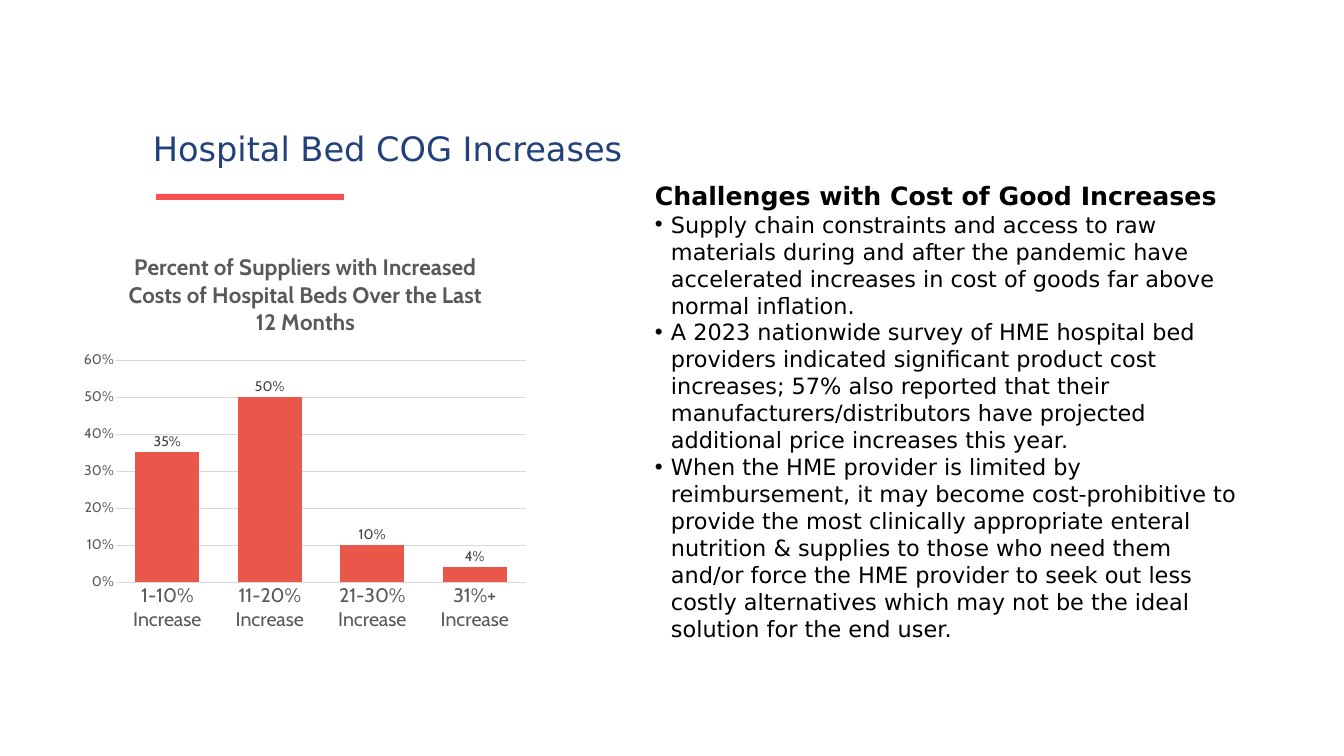
from dataclasses import dataclass

from lxml import etree
from pptx import Presentation
from pptx import util as u
from pptx.chart.data import CategoryChartData
from pptx.dml.color import RGBColor
from pptx.enum import chart as ch, shapes, text
from pptx.oxml import ns

PX = 914400 / 50.4


@dataclass(frozen=True)
class Theme:
    """Colours, fonts and type sizes of the slide."""
    navy: str = "22417B"
    rule: str = "F75152"
    bar: str = "E9564A"
    black: str = "000000"
    grey: str = "595959"
    label: str = "404040"
    grid: str = "D9D9D9"
    body_font: str = "DejaVu Sans"
    chart_font: str = "Cabin"
    title_size: int = 48
    heading_size: int = 36
    body_size: int = 32
    category_size: int = 28
    small_size: int = 20
    title_pitch: float = 130
    body_pitch: float = 38.5


def px(*lengths):
    """Turn px lengths into EMU."""
    return [u.Emu(round(n * PX)) for n in lengths]


def set_font(font, name, size, color, bold=False):
    """Apply one type style to a font."""
    for key, value in dict(name=name, size=u.Pt(size), bold=bold).items():
        setattr(font, key, value)
    font.color.rgb = RGBColor.from_string(color)


class SlideBuilder:
    """Holds the theme and the current slide."""

    def __init__(self, slide, theme):
        """Keep the slide and its theme."""
        self.s, self.t = slide, theme

    def bar(self, box, color):
        """Draw a plain filled rectangle."""
        sp = self.s.shapes.add_shape(shapes.MSO_SHAPE.RECTANGLE, *px(*box))
        sp.shadow.inherit = False
        sp.fill.solid()
        sp.fill.fore_color.rgb = RGBColor.from_string(color)
        sp.line.fill.background()

    def text_box(self, box):
        """Add an empty wrapping text frame."""
        tf = self.s.shapes.add_textbox(*px(*box)).text_frame
        tf.word_wrap = True
        tf.vertical_anchor = text.MSO_ANCHOR.TOP
        return tf

    def paragraph(self, p, words, size, color, bold=False, pitch=None, bullet=False):
        """Fill one paragraph, with an optional hanging bullet."""
        if bullet:
            pPr = p._p.get_or_add_pPr()
            indent = px(16)[0]
            pPr.set("marL", str(indent))
            pPr.set("indent", str(-indent))
            etree.SubElement(pPr, ns.qn("a:buFont")).set("typeface", "Arial")
            etree.SubElement(pPr, ns.qn("a:buChar")).set("char", "•")
        if pitch:
            p.line_spacing = u.Pt(pitch)
        r = p.add_run()
        r.text = words
        set_font(r.font, self.t.body_font, size, color, bold)

    def title(self, box, words):
        """Write the slide title."""
        t = self.t
        p = self.text_box(box).paragraphs[0]
        self.paragraph(p, words, t.title_size, t.navy, pitch=t.title_pitch)

    def bullets(self, box, heading, items):
        """Write a bold heading with bullets under it."""
        t = self.t
        tf = self.text_box(box)
        self.paragraph(tf.paragraphs[0], heading, t.heading_size, t.black, bold=True)
        for item in items:
            self.paragraph(tf.add_paragraph(), item, t.body_size, t.black,
                           pitch=t.body_pitch, bullet=True)

    def column_chart(self, box, plot_box, heading, values):
        """Draw a column chart of percentages."""
        t = self.t
        data = CategoryChartData(number_format="0%")
        data.categories = list(values)
        data.add_series("Series 1", values.values())
        frame = self.s.shapes.add_chart(ch.XL_CHART_TYPE.COLUMN_CLUSTERED, *px(*box), data)
        chart = frame.chart
        set_font(chart.font, t.chart_font, 10, t.black)
        chart.has_legend = False
        chart.has_title = True
        p = chart.chart_title.text_frame.paragraphs[0]
        r = p.add_run()
        r.text = heading
        set_font(r.font, t.chart_font, t.body_size, t.grey, True)
        chart.chart_title.include_in_layout = False

        plot = chart.plots[0]
        for key, value in dict(gap_width=60, overlap=-27, vary_by_categories=False,
                               has_data_labels=True).items():
            setattr(plot, key, value)
        fill = plot.series[0].format.fill
        fill.solid()
        fill.fore_color.rgb = RGBColor.from_string(t.bar)
        labels = plot.data_labels
        for key, value in dict(show_value=True, number_format="0%",
                               number_format_is_linked=False,
                               position=ch.XL_LABEL_POSITION.OUTSIDE_END).items():
            setattr(labels, key, value)
        set_font(labels.font, t.chart_font, t.small_size, t.label)
        self.axes(chart)
        self.plot_layout(chart, box, plot_box)

    def axes(self, chart):
        """Style both axes and the gridlines."""
        t = self.t
        cat, val = chart.category_axis, chart.value_axis
        for axis, size in ((cat, t.category_size), (val, t.small_size)):
            axis.major_tick_mark = axis.minor_tick_mark = ch.XL_TICK_MARK.NONE
            set_font(axis.tick_labels.font, t.chart_font, size, t.grey)
        for key, value in dict(minimum_scale=0, maximum_scale=0.6, major_unit=0.1,
                               has_major_gridlines=True).items():
            setattr(val, key, value)
        val.tick_labels.number_format = "0%"
        val.tick_labels.number_format_is_linked = False
        val.format.line.fill.background()
        for line in (cat.format.line, val.major_gridlines.format.line):
            line.color.rgb = RGBColor.from_string(t.grid)
            line.width = u.Pt(0.75)

    def plot_layout(self, chart, box, plot_box):
        """Place the inner plot area by px on the slide."""
        area = chart._chartSpace.chart.plotArea
        for old in area.findall(ns.qn("c:layout")):
            area.remove(old)
        layout = etree.Element(ns.qn("c:layout"))
        manual = etree.SubElement(layout, ns.qn("c:manualLayout"))
        left, top, width, height = box
        x, y, w, h = plot_box
        parts = dict(layoutTarget="inner", xMode="edge", yMode="edge",
                     x=(x - left) / width, y=(y - top) / height, w=w / width, h=h / height)
        for key, value in parts.items():
            etree.SubElement(manual, ns.qn(f"c:{key}")).set("val", str(value))
        area.insert(0, layout)


def main():
    """Build and save the slide."""
    prs = Presentation()
    prs.slide_width, prs.slide_height = px(1344, 756)
    theme = Theme()
    slide = SlideBuilder(prs.slides.add_slide(prs.slide_layouts[6]), theme)
    slide.bar((156, 194, 188, 6), theme.rule)
    slide.title((148, 75, 1090, 114), "Hospital Bed COG Increases")
    slide.bullets((650, 178, 596, 353), "Challenges with Cost of Good Increases", [
        "Supply chain constraints and access to raw materials during and after the "
        "pandemic have accelerated increases in cost of goods far above normal inflation.",
        "A 2023 nationwide survey of HME hospital bed providers indicated significant "
        "product cost increases; 57% also reported that their manufacturers/distributors "
        "have projected additional price increases this year.",
        "When the HME provider is limited by reimbursement, it may become cost-prohibitive "
        "to provide the most clinically appropriate enteral nutrition & supplies to those "
        "who need them and/or force the HME provider to seek out less costly alternatives "
        "which may not be the ideal solution for the end user.",
    ])
    slide.column_chart(
        (75, 237, 461, 402), (116, 360, 410, 222),
        "Percent of Suppliers with Increased Costs of Hospital Beds Over the Last 12 Months",
        {"1-10% Increase": 0.35, "11-20% Increase": 0.5,
         "21-30% Increase": 0.1, "31%+ Increase": 0.04})
    prs.save("out.pptx")


if __name__ == "__main__":
    main()
